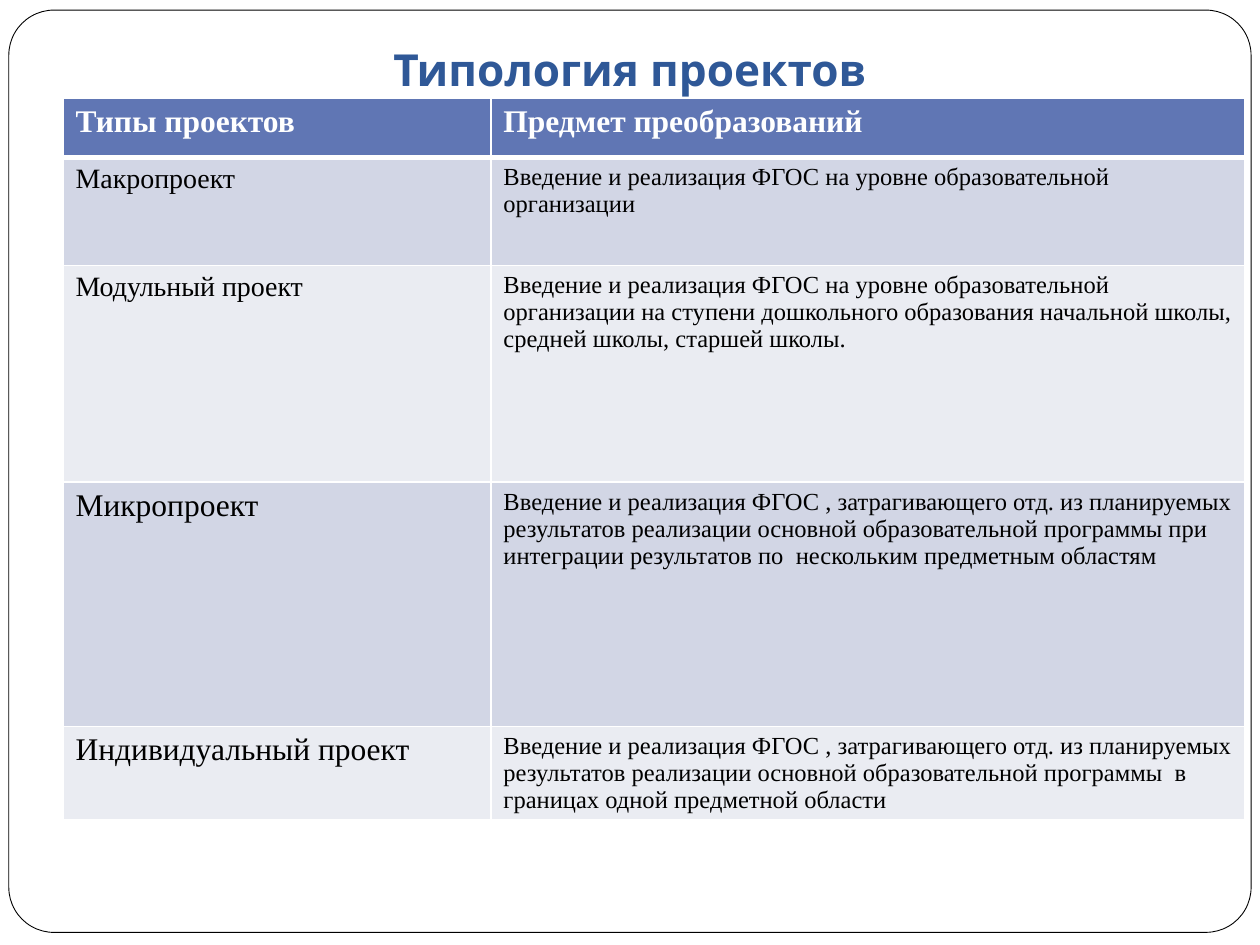
from lxml.etree import SubElement
from pptx import Presentation
from pptx.dml.color import RGBColor
from pptx.enum.shapes import MSO_SHAPE
from pptx.enum.text import MSO_ANCHOR, MSO_AUTO_SIZE, PP_ALIGN
from pptx.oxml.ns import qn
from pptx.util import Pt

SERIF = "Times New Roman"
WHITE, BLACK = "FFFFFF", "000000"
HEADER_FILL, BAND_FILLS = "6076B4", ("D2D6E5", "EAECF2")
COLUMN_WIDTHS = (244.5, 431)
HEADER = ("Типы проектов", "Предмет преобразований")
# Project type, its text size, subject of change, row height
PROJECTS = (
    ("Макропроект", 16,
     "Введение и реализация ФГОС на уровне образовательной организации", 61.7),
    ("Модульный проект", 16,
     "Введение и реализация ФГОС на уровне образовательной организации на ступени "
     "дошкольного образования начальной школы, средней школы, старшей школы.", 123.8),
    ("Микропроект", 18,
     "Введение и реализация ФГОС , затрагивающего отд. из планируемых результатов "
     "реализации основной образовательной программы при интеграции результатов по  "
     "нескольким предметным областям", 139.6),
    ("Индивидуальный проект", 18,
     "Введение и реализация ФГОС , затрагивающего отд. из планируемых результатов "
     "реализации основной образовательной программы  в границах одной предметной "
     "области", 53.6),
)


def color(value):
    return RGBColor.from_string(value)


def write(frame, text, font=SERIF, size=14, fill=BLACK, bold=False, align=PP_ALIGN.LEFT):
    para = frame.paragraphs[0]
    para.alignment = align
    span = para.add_run()
    span.text = text
    span.font.name = font
    span.font.size = Pt(size)
    span.font.bold = bold
    span.font.color.rgb = color(fill)


def set_borders(cell, bottom):
    properties = cell._tc.get_or_add_tcPr()
    widths = {"a:lnL": 1, "a:lnR": 1, "a:lnT": 1, "a:lnB": bottom}
    for position, (tag, width) in enumerate(widths.items()):
        line = SubElement(properties, qn(tag), w=str(Pt(width)))
        SubElement(SubElement(line, qn("a:solidFill")), qn("a:srgbClr"), val=WHITE)
        properties.insert(position, line)  # borders come before the fill


def fill_cell(cell, text, background, bottom=1, **text_format):
    cell.fill.solid()
    cell.fill.fore_color.rgb = color(background)
    cell.margin_right = Pt(5)
    set_borders(cell, bottom)
    write(cell.text_frame, text, **text_format)


def add_frame(page, left, top, width, height):
    frame = page.shapes.add_shape(MSO_SHAPE.ROUNDED_RECTANGLE,
                                  Pt(left), Pt(top), Pt(width), Pt(height))
    frame.adjustments[0] = 0.049
    frame.shadow.inherit = False
    frame.fill.solid()
    frame.fill.fore_color.rgb = color(WHITE)
    frame.line.color.rgb = color(BLACK)
    frame.line.width = Pt(0.5)
    page.shapes._spTree.insert(2, frame._element)  # behind the title


def add_title(page, left, top, width, height):
    title = page.shapes.title
    title.left, title.top, title.width, title.height = map(Pt, (left, top, width, height))
    box = title.text_frame
    box.auto_size = MSO_AUTO_SIZE.NONE
    box.vertical_anchor = MSO_ANCHOR.BOTTOM
    box.margin_left = box.margin_right = box.margin_bottom = Pt(7.2)
    box.margin_top = Pt(3.6)
    write(box, "Типология проектов", font="Karla", size=25.2, fill="2F5897",
          bold=True, align=PP_ALIGN.CENTER)


def add_projects_table(page, left, top, header_height):
    heights = [header_height] + [project[3] for project in PROJECTS]
    table = page.shapes.add_table(len(heights), len(COLUMN_WIDTHS), Pt(left), Pt(top),
                                  Pt(sum(COLUMN_WIDTHS)), Pt(sum(heights))).table
    for column, width in zip(table.columns, COLUMN_WIDTHS):
        column.width = Pt(width)
    for row, height in zip(table.rows, heights):
        row.height = Pt(height)
    # Header row
    for column, text in enumerate(HEADER):
        fill_cell(table.cell(0, column), text, HEADER_FILL, bottom=3,
                  size=18, fill=WHITE, bold=True)
    # Banded project rows
    for row, (name, size, subject, _) in enumerate(PROJECTS, start=1):
        band = BAND_FILLS[(row - 1) % 2]
        fill_cell(table.cell(row, 0), name, band, size=size)
        fill_cell(table.cell(row, 1), subject, band)


def main():
    deck = Presentation()
    deck.slide_width, deck.slide_height = Pt(720), Pt(540)
    page = deck.slides.add_slide(deck.slide_layouts[5])
    add_frame(page, 5.04, 5.76, 709.92, 527.04)
    add_title(page, 36, 21.6, 648, 40.32)
    add_projects_table(page, 36, 56.16, 33.84)
    deck.save("out.pptx")


if __name__ == "__main__":
    main()
